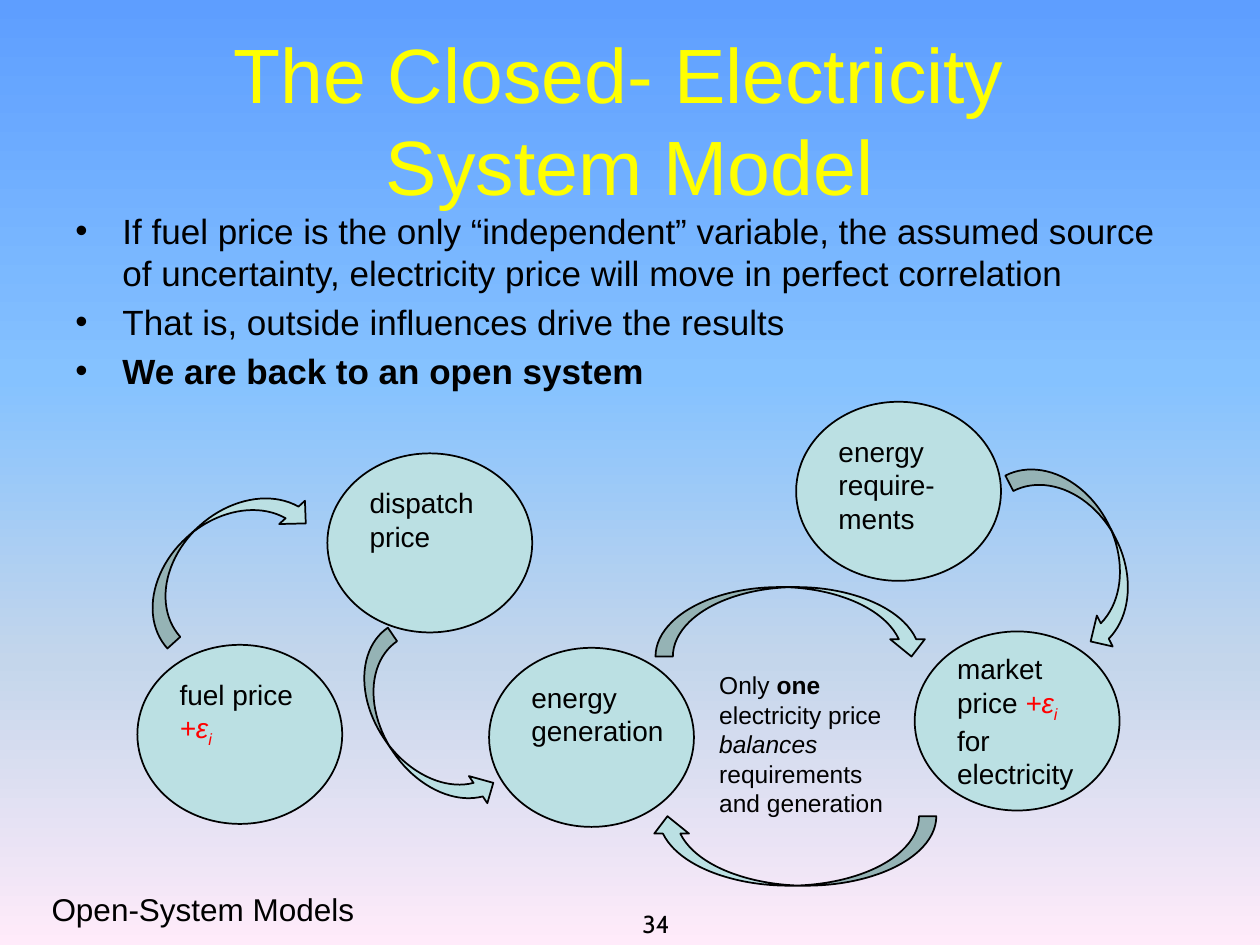
from lxml import etree
from pptx import Presentation
from pptx.dml.color import RGBColor
from pptx.enum.shapes import MSO_SHAPE
from pptx.enum.text import MSO_ANCHOR, PP_ALIGN
from pptx.oxml import parse_xml
from pptx.oxml.ns import nsdecls, qn
from pptx.util import Cm, Pt

ELLIPSE, CURVED_ARROW = MSO_SHAPE.OVAL, MSO_SHAPE.CURVED_LEFT_ARROW
TOP, MIDDLE, BOTTOM = MSO_ANCHOR.TOP, MSO_ANCHOR.MIDDLE, MSO_ANCHOR.BOTTOM
LEFT, CENTER = PP_ALIGN.LEFT, PP_ALIGN.CENTER

COLORS = {"title": "FFFF00", "text": "000000", "error": "FF0000",
          "fill": "BBE0E3", "line": "000000"}
SKY = {0: "5E9EFF", 40: "85C2FF", 70: "C4D6EB", 100: "FFEBFA"}
BOLD, ITALIC = {"bold": True}, {"italic": True}
ERROR_TERM = [("+ε", {"italic": True, "color": "error"}),
              ("i", {"italic": True, "color": "error", "baseline": -25})]


def rgb(name):
    return RGBColor.from_string(COLORS[name])


def add_run(paragraph, text, size=16, font="Arial", color="text",
            bold=False, italic=False, baseline=0):
    run = paragraph.add_run()
    run.text = text
    run.font.size, run.font.name = Pt(size), font
    run.font.bold, run.font.italic = bold, italic
    run.font.color.rgb = rgb(color)
    if baseline:
        run.font._element.set("baseline", str(baseline * 1000))


class SlideBuilder:
    """Hold the diagram style and the slide being filled."""

    def __init__(self, slide):
        self.slide = slide

    def background(self, stops):
        marks = "".join(f'<a:gs pos="{at * 1000}"><a:srgbClr val="{color}"/></a:gs>'
                        for at, color in stops.items())
        self.slide.element.cSld.insert(0, parse_xml(
            f'<p:bg {nsdecls("p", "a")}><p:bgPr><a:gradFill rotWithShape="1">'
            f'<a:gsLst>{marks}</a:gsLst><a:lin ang="5400000" scaled="0"/>'
            '</a:gradFill><a:effectLst/></p:bgPr></p:bg>'))

    def fill_text(self, frame, paragraphs, align=LEFT, anchor=TOP, wrap=True,
                  bullet=False, **style):
        frame.word_wrap, frame.vertical_anchor = wrap, anchor
        for number, pieces in enumerate(paragraphs):
            paragraph = frame.add_paragraph() if number else frame.paragraphs[0]
            paragraph.alignment = align
            if bullet:
                self.bullet(paragraph)
                if number:
                    paragraph.space_before = Pt(4)
            for text, changes in pieces:
                for row, line in enumerate(text.split("\n")):
                    if row:
                        paragraph.add_line_break()
                    if line:
                        add_run(paragraph, line, **{**style, **changes})

    def bullet(self, paragraph):
        properties = paragraph._p.get_or_add_pPr()
        properties.set("marL", str(Cm(0.95)))
        properties.set("indent", str(-Cm(0.95)))
        etree.SubElement(properties, qn("a:buFont")).set("typeface", "Arial")
        etree.SubElement(properties, qn("a:buChar")).set("char", "•")

    def text(self, box, paragraphs, **style):
        label = self.slide.shapes.add_textbox(*map(Cm, box))
        self.fill_text(label.text_frame, paragraphs, **style)

    def shape(self, kind, box):
        shape = self.slide.shapes.add_shape(kind, *map(Cm, box))
        shape.shadow.inherit = False
        shape.fill.solid()
        shape.fill.fore_color.rgb = rgb("fill")
        shape.line.color.rgb = rgb("line")
        shape.line.width = Pt(1)
        return shape

    def node(self, left, top, paragraphs, anchor=TOP):
        ellipse = self.shape(ELLIPSE, (left, top, 4.13, 3.61))
        self.fill_text(ellipse.text_frame, paragraphs, anchor=anchor, wrap=False)

    def arrow(self, box, rotation, mirrored=False):
        arrow = self.shape(CURVED_ARROW, box)
        arrow.rotation = rotation
        if mirrored:
            arrow.element.spPr.find(qn("a:xfrm")).set("flipH", "1")


def plain(*lines):
    return [[(line, {})] for line in lines]


def main():
    deck = Presentation()
    deck.slide_width, deck.slide_height = Cm(25.4), Cm(19.05)
    page = SlideBuilder(deck.slides.add_slide(deck.slide_layouts[6]))
    page.background(SKY)

    page.text((9.2, 17.78, 8.05, 1.27), plain("34"), size=14, font="Cabin",
              align=CENTER, anchor=BOTTOM)
    page.text((1.27, 0.61, 22.86, 3.56),
              plain("The Closed- Electricity \nSystem Model"),
              size=44, color="title", align=CENTER, anchor=MIDDLE)

    page.node(2.77, 13, [[("fuel price\n", {}), *ERROR_TERM]])
    page.node(6.6, 9.14, plain("dispatch", "price"))
    page.node(9.86, 13.06, plain("energy", "generation"))
    page.node(16.05, 8.1, plain("energy", "require-", "ments"))
    page.node(18.44, 12.73,
              [[("market", {})], [("price ", {}), *ERROR_TERM],
               *plain("for", "electricity")], anchor=MIDDLE)

    page.arrow((3.73, 9.12, 1.4, 4.11), 227.9)
    page.arrow((7.77, 12.67, 1.32, 4.11), 325.8, mirrored=True)
    page.arrow((21.13, 9.04, 1.4, 4.11), 332.8)
    page.arrow((15.29, 14.27, 1.4, 5.77), 90)
    page.arrow((15.27, 9.78, 1.4, 5.51), 270)

    page.text((14.25, 13.39, 4.01, 3.25),
              [[("Only ", {}), ("one", BOLD), (" electricity price ", {}),
                ("balances", ITALIC), (" requirements and generation", {})]],
              size=14)
    page.text((1.27, 4.09, 22.86, 4.42),
              [*plain("If fuel price is the only “independent” variable, the "
                      "assumed source of uncertainty, electricity price will "
                      "move in perfect correlation",
                      "That is, outside influences drive the results"),
               [("We are back to an open system", BOLD)]],
              size=20, bullet=True)
    page.text((0.79, 17.81, 9.32, 1.02), plain("Open-System Models"), size=18)
    deck.save("out.pptx")


if __name__ == "__main__":
    main()
